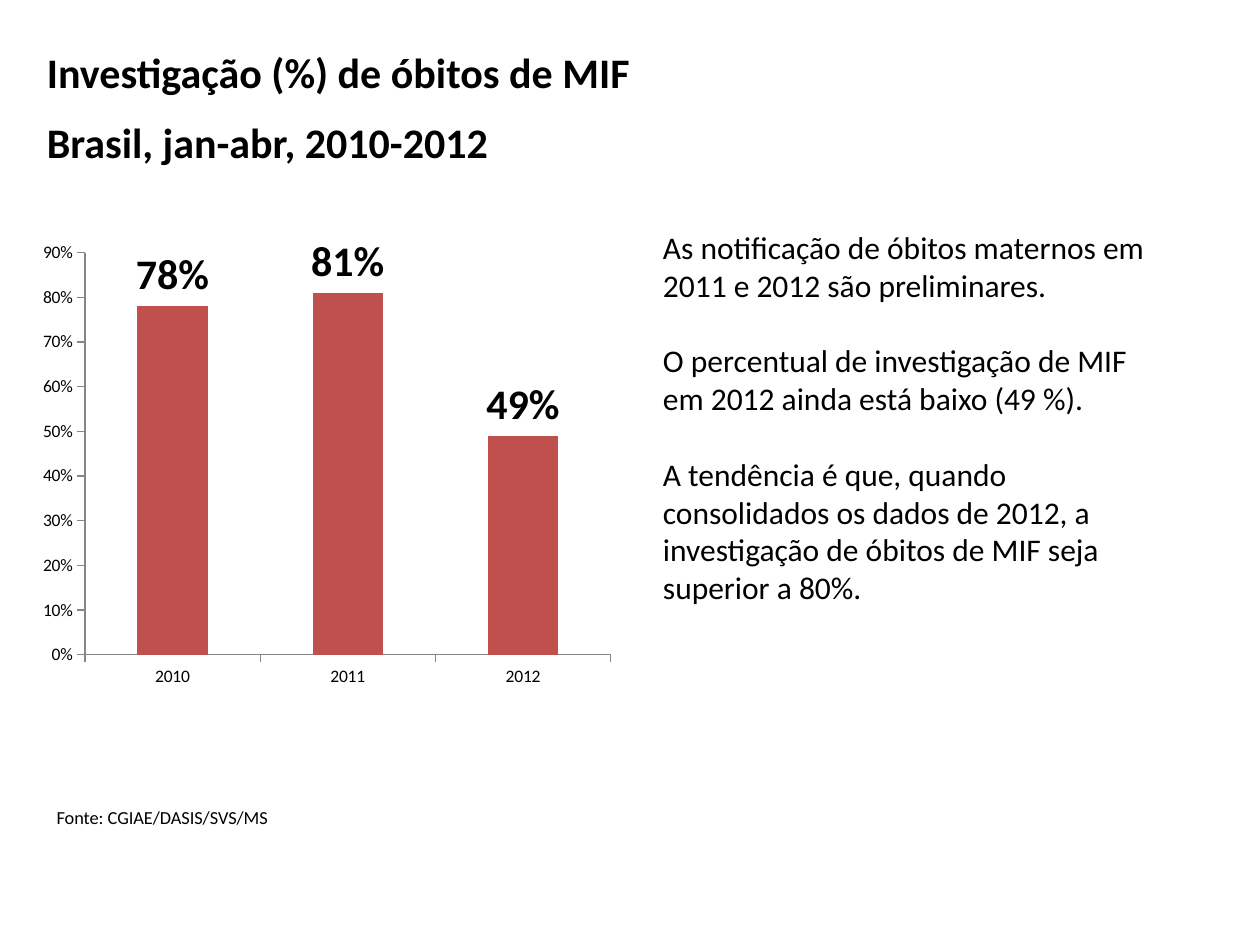
from lxml import etree
from pptx import Presentation
from pptx.chart.data import CategoryChartData
from pptx.dml.color import RGBColor
from pptx.enum.chart import XL_CHART_TYPE, XL_LABEL_POSITION, XL_TICK_MARK
from pptx.enum.text import MSO_ANCHOR, MSO_AUTO_SIZE, PP_ALIGN
from pptx.oxml.ns import qn
from pptx.util import Cm, Pt

COLUMN = XL_CHART_TYPE.COLUMN_CLUSTERED
LABEL_ABOVE = XL_LABEL_POSITION.OUTSIDE_END
TICK_OUT, TICK_NONE = XL_TICK_MARK.OUTSIDE, XL_TICK_MARK.NONE
TOP, LEFT = MSO_ANCHOR.TOP, PP_ALIGN.LEFT
NO_FIT = MSO_AUTO_SIZE.NONE

FONT = "Calibri"
BLACK, BAR_RED, AXIS_GRAY = "000000", "C0504D", "868686"

TITLE = ["Investigação (%) de óbitos de MIF", "Brasil, jan-abr, 2010-2012"]
COMMENTS = [
    "As notificação de óbitos maternos em 2011 e 2012 são preliminares.",
    "O percentual de investigação de MIF em 2012 ainda está baixo (49 %).",
    "A tendência é que, quando consolidados os dados de 2012, a "
    "investigação de óbitos de MIF seja superior a 80%.",
]
RATES = {"2010": 0.78, "2011": 0.81, "2012": 0.49}


def rgb(value):
    return RGBColor.from_string(value)


def set_font(font, size, bold=False):
    font.name, font.size, font.bold = FONT, Pt(size), bold
    font.color.rgb = rgb(BLACK)


def place(sp, left, top, width, height):
    sp.left, sp.top, sp.width, sp.height = map(Cm, (left, top, width, height))


def fill_text(sp, texts, size, bold=False, gap=0, line=None):
    """Write one plain, left-aligned paragraph per text."""
    tf = sp.text_frame
    tf.word_wrap, tf.auto_size, tf.vertical_anchor = True, NO_FIT, TOP
    for i, text in enumerate(texts):
        p = tf.paragraphs[0] if i == 0 else tf.add_paragraph()
        pPr = p._p.get_or_add_pPr()
        pPr.set("marL", "0")
        pPr.set("indent", "0")
        etree.SubElement(pPr, qn("a:buNone"))
        p.alignment = LEFT
        p.space_before = Pt(gap if i else 0)
        if line:
            p.line_spacing = Pt(line)
        r = p.add_run()
        r.text = text
        set_font(r.font, size, bold)


def set_plot_area(chart, **fractions):
    """Fix the inner plot area as fractions of the chart."""
    area = chart._chartSpace.chart.plotArea
    for old in area.findall(qn("c:layout")):
        area.remove(old)
    layout = etree.Element(qn("c:layout"))
    area.insert(0, layout)
    manual = etree.SubElement(layout, qn("c:manualLayout"))
    settings = {"layoutTarget": "inner", "xMode": "edge", "yMode": "edge"}
    for name, value in {**settings, **fractions}.items():
        etree.SubElement(manual, qn(f"c:{name}")).set("val", str(value))


def add_rate_chart(s):
    data = CategoryChartData(number_format="0%")
    data.categories = list(RATES)
    data.add_series("Series 1", list(RATES.values()))
    frame = s.shapes.add_chart(COLUMN, Cm(0.64), Cm(4.72), Cm(11.91), Cm(9.32), data)
    chart = frame.chart
    chart.has_legend = chart.has_title = False
    set_font(chart.font, 10)
    set_plot_area(chart, x=0.09, y=0.04, w=0.89, h=0.87)

    # Axes
    for axis in (chart.category_axis, chart.value_axis):
        axis.has_major_gridlines = False
        axis.major_tick_mark, axis.minor_tick_mark = TICK_OUT, TICK_NONE
        axis.format.line.color.rgb = rgb(AXIS_GRAY)
        axis.format.line.width = Pt(0.75)
    scale = chart.value_axis
    scale.minimum_scale, scale.maximum_scale, scale.major_unit = 0, 0.9, 0.1
    scale.tick_labels.number_format = "0%"
    scale.tick_labels.number_format_is_linked = False

    # Bars and their labels
    plot = chart.plots[0]
    plot.gap_width, plot.vary_by_categories = 150, False
    fill = plot.series[0].format.fill
    fill.solid()
    fill.fore_color.rgb = rgb(BAR_RED)
    labels = plot.series[0].data_labels
    labels.show_value = True
    labels.number_format, labels.number_format_is_linked = "0%", False
    labels.position = LABEL_ABOVE
    set_font(labels.font, 24, bold=True)


def main():
    prs = Presentation()
    prs.slide_width, prs.slide_height = Cm(25.4), Cm(19.05)
    s = prs.slides.add_slide(prs.slide_layouts[1])

    # Title
    title = s.shapes.title
    place(title, 0.69, 1.12, 22.2, 1.6)
    fill_text(title, TITLE, 24, bold=True, gap=20, line=20)

    # Comments beside the chart
    body = s.placeholders[1]
    place(body, 13.11, 4.47, 10.39, 7.95)
    fill_text(body, COMMENTS, 18, gap=21.6)

    add_rate_chart(s)

    # Source line
    source = s.shapes.add_textbox(Cm(0.89), Cm(16.13), Cm(7.39), Cm(0.71))
    fill_text(source, ["Fonte: CGIAE/DASIS/SVS/MS"], 10.5)

    prs.save("out.pptx")


if __name__ == "__main__":
    main()
